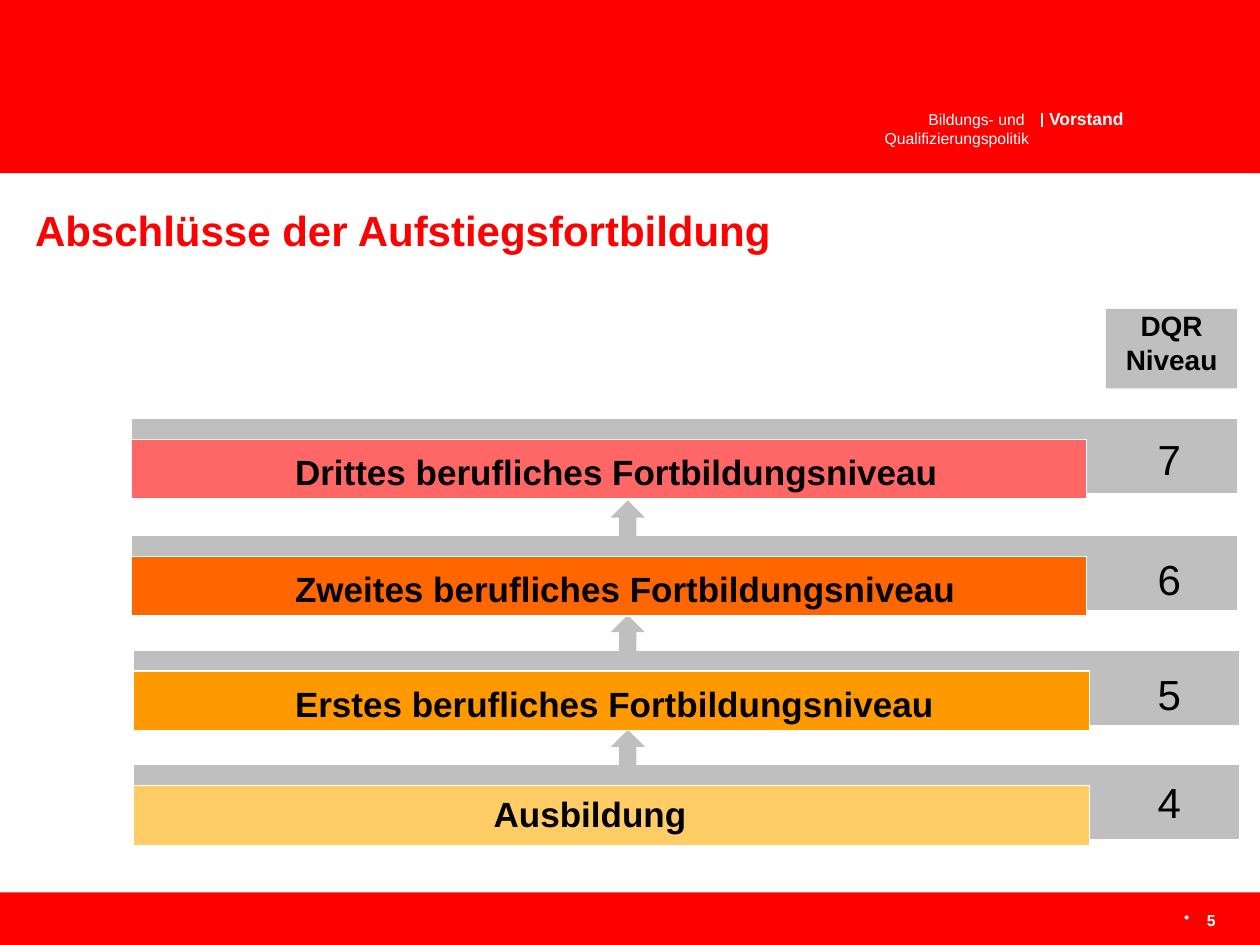
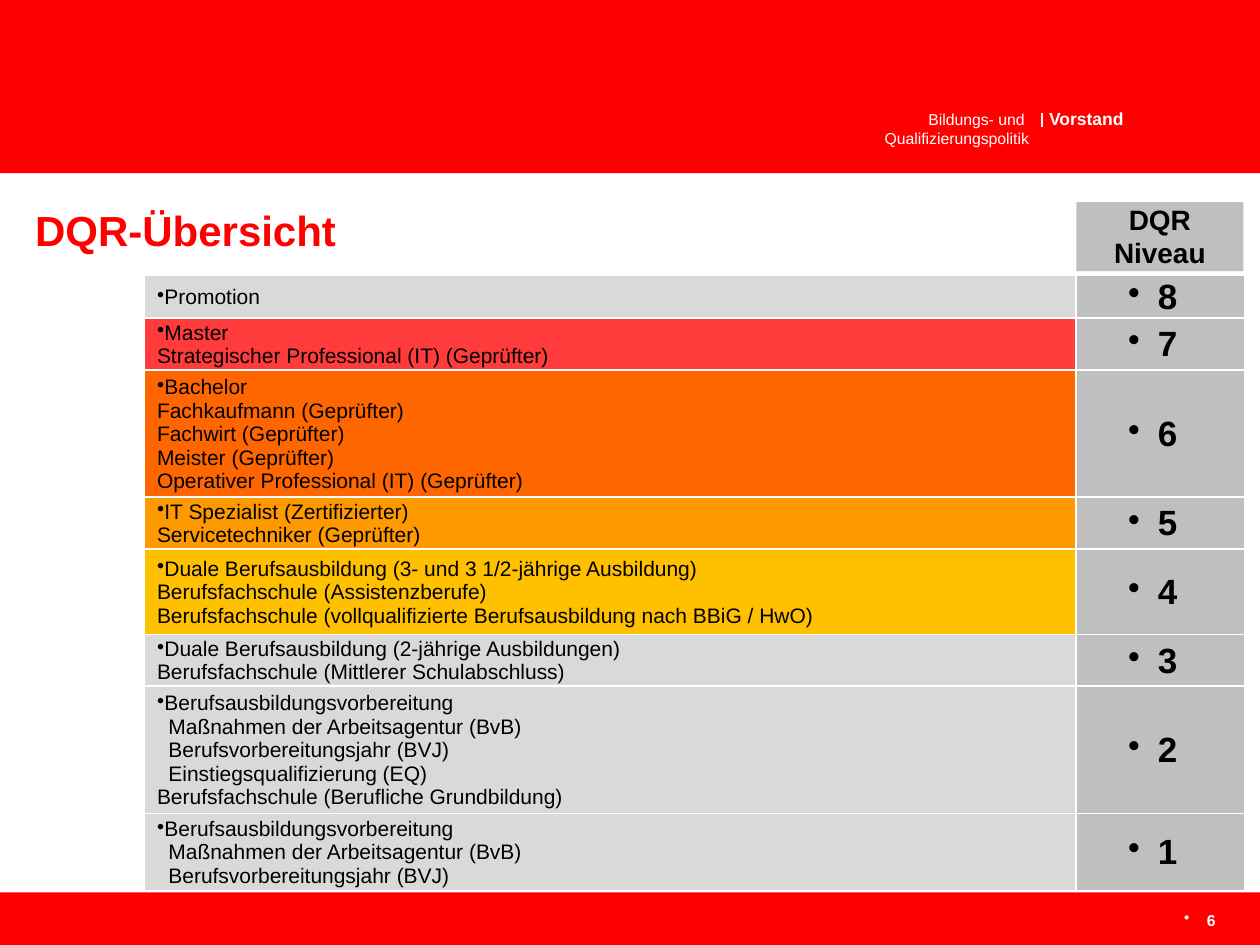
from copy import deepcopy

from lxml import etree
from pptx import Presentation
from pptx.dml.color import RGBColor
from pptx.enum.shapes import MSO_CONNECTOR, MSO_SHAPE
from pptx.enum.text import MSO_ANCHOR, PP_ALIGN
from pptx.oxml.ns import qn
from pptx.util import Pt

RED = RGBColor(0xFF, 0x00, 0x00)
WHITE = RGBColor(0xFF, 0xFF, 0xFF)
BLACK = RGBColor(0x00, 0x00, 0x00)
GREY = RGBColor(0xBF, 0xBF, 0xBF)
PALE = RGBColor(0xD9, 0xD9, 0xD9)
ROSE = RGBColor(0xFF, 0x66, 0x66)
CORAL = RGBColor(0xFF, 0x3B, 0x3B)
ORANGE = RGBColor(0xFF, 0x66, 0x00)
AMBER = RGBColor(0xFF, 0x99, 0x00)
GOLD = RGBColor(0xFF, 0xC0, 0x00)
SAND = RGBColor(0xFF, 0xCC, 0x66)

RECT, ARROW = MSO_SHAPE.RECTANGLE, MSO_SHAPE.UP_ARROW
LINE = MSO_CONNECTOR.STRAIGHT
LEFT, CENTER, RIGHT = PP_ALIGN.LEFT, PP_ALIGN.CENTER, PP_ALIGN.RIGHT
TOP, MIDDLE = MSO_ANCHOR.TOP, MSO_ANCHOR.MIDDLE
FONT = "Arial"

# Left, back bar top, digit top, level, label left, label top, label, colour
STEPS = [
    (75, 239, 244, "7", 161.5, 254, "Drittes berufliches Fortbildungsniveau", ROSE),
    (75, 306, 312.5, "6", 161.5, 321, "Zweites berufliches Fortbildungsniveau", ORANGE),
    (76.5, 371.5, 378.5, "5", 161.5, 386.5, "Erstes berufliches Fortbildungsniveau", AMBER),
    (76.5, 437, 440, "4", 275, 449.5, "Ausbildung", SAND),
]

# Level, row height, colour, paragraphs (the second one is indented)
LEVELS = [
    ("8", 24, PALE, ["Promotion"]),
    ("7", 28.8, CORAL, ["Master\nStrategischer Professional (IT) (Geprüfter)"]),
    ("6", 70.4, ORANGE, ["Bachelor\nFachkaufmann (Geprüfter)\nFachwirt (Geprüfter)\n"
                         "Meister (Geprüfter)\nOperativer Professional (IT) (Geprüfter)"]),
    ("5", 28.8, AMBER, ["IT Spezialist (Zertifizierter)\nServicetechniker (Geprüfter)"]),
    ("4", 48.8, GOLD, ["Duale Berufsausbildung (3- und 3 1/2-jährige Ausbildung)\n"
                       "Berufsfachschule (Assistenzberufe)\n"
                       "Berufsfachschule (vollqualifizierte Berufsausbildung nach BBiG / HwO)"]),
    ("3", 28.8, PALE, ["Duale Berufsausbildung (2-jährige Ausbildungen)\n"
                       "Berufsfachschule (Mittlerer Schulabschluss)"]),
    ("2", 70.4, PALE, ["Berufsausbildungsvorbereitung",
                       "Maßnahmen der Arbeitsagentur (BvB)\nBerufsvorbereitungsjahr (BVJ)\n"
                       "Einstiegsqualifizierung (EQ)",
                       "Berufsfachschule (Berufliche Grundbildung)"]),
    ("1", 42.4, PALE, ["Berufsausbildungsvorbereitung",
                       "Maßnahmen der Arbeitsagentur (BvB)\nBerufsvorbereitungsjahr (BVJ)"]),
]


def write(para, text, size=12, color=BLACK, bold=False, align=LEFT,
          space=None, bullet=False, margin=0, indent=0):
    """Fill one paragraph; a newline becomes a line break."""
    para.text = text
    para.alignment = align
    if space:
        para.line_spacing = Pt(space)
    props = para._p.get_or_add_pPr()
    props.set("marL", str(Pt(margin)))
    props.set("indent", str(Pt(indent)))
    if bullet:
        etree.SubElement(props, qn("a:buChar")).set("char", "•")
    else:
        etree.SubElement(props, qn("a:buNone"))
    for run in para.runs:
        font = run.font
        font.name, font.size, font.bold = FONT, Pt(size), bold
        font.color.rgb = color
    for gap in para._p.findall(qn("a:br")):
        gap.append(deepcopy(para.runs[0]._r.rPr))


class Deck:
    def __init__(self):
        self.prs = Presentation()
        self.prs.slide_width, self.prs.slide_height = Pt(720), Pt(540)
        self.slide = None

    def fit(self, frame, inset, anchor):
        frame.word_wrap = True
        frame.vertical_anchor = anchor
        if not inset:
            frame.margin_left = frame.margin_right = 0
            frame.margin_top = frame.margin_bottom = 0

    def shape(self, kind, box, fill, edge=None):
        item = self.slide.shapes.add_shape(kind, *map(Pt, box))
        item.shadow.inherit = False
        item.fill.solid()
        item.fill.fore_color.rgb = fill
        if edge:
            item.line.color.rgb = edge
            item.line.width = Pt(0.75)
        else:
            item.line.fill.background()
        return item

    def text(self, box, text, inset=False, anchor=TOP, **style):
        frame = self.slide.shapes.add_textbox(*map(Pt, box)).text_frame
        self.fit(frame, inset, anchor)
        write(frame.paragraphs[0], text, **style)

    def line(self, start, end, color, width):
        item = self.slide.shapes.add_connector(LINE, *map(Pt, start + end))
        item.line.color.rgb = color
        item.line.width = Pt(width)
        etree.SubElement(item._element.spPr, qn("a:effectLst"))

    def tag(self, box):
        frame = self.shape(RECT, box, GREY).text_frame
        self.fit(frame, False, TOP)
        write(frame.paragraphs[0], "DQR\nNiveau", size=16, bold=True, align=CENTER)

    def cell(self, cell, fill):
        cell.margin_left = cell.margin_right = cell.margin_top = Pt(0.75)
        cell.margin_bottom = 0
        cell.vertical_anchor = MIDDLE
        props = cell._tc.get_or_add_tcPr()
        for side in ("lnL", "lnR", "lnT", "lnB"):
            edge = etree.SubElement(props, qn("a:" + side), w=str(Pt(1)))
            paint = etree.SubElement(edge, qn("a:solidFill"))
            etree.SubElement(paint, qn("a:srgbClr"), val=str(WHITE))
        cell.fill.solid()
        cell.fill.fore_color.rgb = fill

    def table(self, left, top, widths, rows):
        high = sum(row[1] for row in rows)
        grid = self.slide.shapes.add_table(
            len(rows), len(widths), Pt(left), Pt(top), Pt(sum(widths)), Pt(high)).table
        grid.first_row = grid.horz_banding = False
        for col, width in zip(grid.columns, widths):
            col.width = Pt(width)
        for i, (level, height, fill, paras) in enumerate(rows):
            grid.rows[i].height = Pt(height)
            name, mark = grid.cell(i, 0), grid.cell(i, 1)
            self.cell(name, fill)
            self.cell(mark, GREY)
            frame = name.text_frame
            for j, text in enumerate(paras):
                para = frame.add_paragraph() if j else frame.paragraphs[0]
                write(para, text, bullet=j == 0, margin=13 if j == 1 else 6.5)
            write(mark.text_frame.paragraphs[0], level, size=20, bold=True,
                  align=CENTER, bullet=True, margin=8, indent=-17)

    def page(self, title, number):
        """Start a slide with its bands, header, page number and title."""
        self.slide = self.prs.slides.add_slide(self.prs.slide_layouts[6])
        self.shape(RECT, (0, 510, 720, 30), RED)
        self.shape(RECT, (0, 0, 720, 99), RED)
        self.text((599.5, 63, 46, 11), "Vorstand", size=10, color=WHITE, bold=True, space=11)
        self.line((595.5, 64.5), (595.5, 72.5), WHITE, 0.8)
        self.text((490, 62.5, 98, 22), "Bildungs- und \nQualifizierungspolitik",
                  size=9, color=WHITE, align=RIGHT, space=11)
        self.text((676, 519, 18.7, 12), number, size=9, color=WHITE, bold=True,
                  align=RIGHT, space=12, bullet=True, margin=13, indent=-13)
        self.text((20, 111.5, 567, 42.5), title, anchor=MIDDLE,
                  size=24, color=RED, bold=True, space=26)


def main():
    deck = Deck()

    # Staircase of qualification levels
    deck.page("Abschlüsse der Aufstiegsfortbildung", "5")
    for i, (left, top, high, level, *_) in enumerate(STEPS):
        deck.shape(RECT, (left, top, 632, 43), GREY, WHITE)
        deck.text((654.5, high, 45, 36), level, inset=True, size=24)
        if i:
            deck.shape(ARROW, (349, top - 20, 19.5, 21), GREY)
    deck.tag((632, 176.5, 75, 45.5))
    for left, top, _, _, start, high, label, fill in STEPS:
        deck.shape(RECT, (left, top + 12, 546, 34), fill, WHITE)
        deck.text((start, high, 430, 32), label, inset=True, size=20, bold=True)

    # Overview table
    deck.page("DQR-Übersicht", "6")
    deck.table(82.5, 157, (532.5, 96.5), LEVELS)
    deck.tag((615, 115.5, 95.5, 39.5))

    deck.prs.save("out.pptx")


if __name__ == "__main__":
    main()
